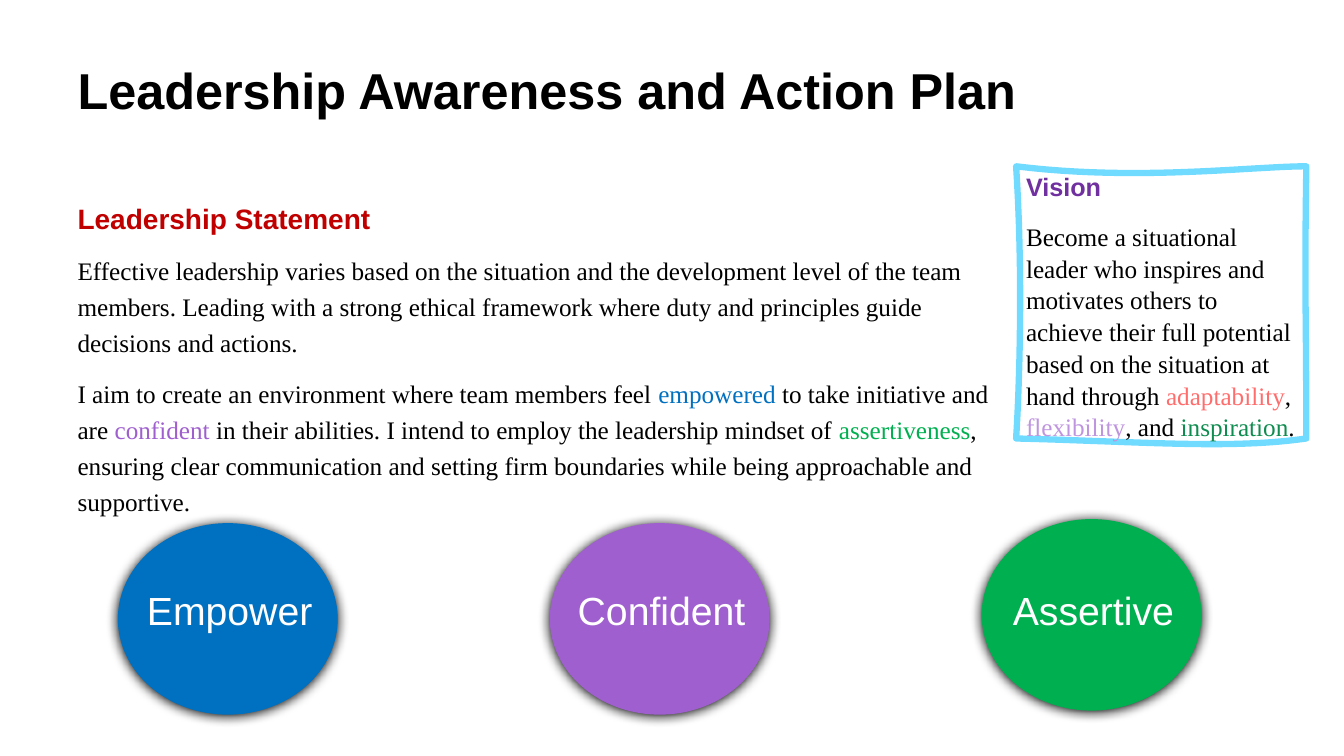
from lxml import etree
from pptx import Presentation
from pptx import util as u
from pptx.dml.color import RGBColor
from pptx.enum import shapes, text
from pptx.oxml.ns import qn

# Content: a paragraph is a list of (words, colour) runs
TITLE = [[("Leadership Awareness and Action Plan", "000000")]]
STATEMENT_HEAD = [[("Leadership Statement", "C00000")]]
STATEMENT = [
    [("Effective leadership varies based on the situation and the development "
      "level of the team members. Leading with a strong ethical framework where "
      "duty and principles guide decisions and actions.", "000000")],
    [("I aim to create an environment where team members feel ", "000000"),
     ("empowered", "0070C0"),
     (" to take initiative and are ", "000000"),
     ("confident", "9F5FCF"),
     (" in their abilities. I intend to employ the leadership mindset of ", "000000"),
     ("assertiveness", "00B050"),
     (", ensuring clear communication and setting firm boundaries while being "
      "approachable and supportive.", "000000")],
]
VISION_HEAD = [[("Vision", "7030A0")]]
VISION = [
    [("Become a situational leader who inspires and motivates others to achieve "
      "their full potential based on the situation at hand through ", "000000"),
     ("adaptability", "FF6D6D"),
     (", ", "000000"),
     ("flexibility", "BF95DF"),
     (", and ", "000000"),
     ("inspiration", "0F8C4F"),
     (".", "000000")],
]
# Label, colour, top of circle, width of label
VALUES = [
    ("Empower", "0070C0", 373.7, 157),
    ("Confident", "9F5FCF", 373.7, 157),
    ("Assertive", "00B050", 370.8, 142),
]

# Layout, in points
TITLE_BOX = (48.2, 43.2, 838.8, 89.3)
STATEMENT_BOX = (48.2, 135.4, 686.2, 238.3)
CIRCLE_WIDTH, CIRCLE_HEIGHT = 157, 136.8
FIRST_CENTRE, CENTRE_STEP = 162.7, 308.5
LABEL_TOP, LABEL_HEIGHT, LABEL_SHIFT = 415.4, 41, 1.3
FRAME_START = (725.8, 118.8)
FRAME_CURVES = [  # two control points and an end point per side
    ((812.9, 129.6), (894.2, 118.8), (933.1, 118.8)),
    ((931.7, 214.6), (933.1, 223.9), (933.1, 313.2)),
    ((878.4, 321.1), (815, 315.4), (725.8, 313.2)),
    ((727.2, 291.6), (731.5, 206.6), FRAME_START),
]
CURVE_STEPS = 24

# Text formats
TITLE_FONT = {"name": "Arial", "size": u.Pt(36), "bold": True}
HEAD_FONT = {"name": "Arial", "size": u.Pt(20), "bold": True}
VISION_FONT = {"name": "Arial", "size": u.Pt(18), "bold": True}
BODY_FONT = {"name": "Times New Roman", "size": u.Pt(18), "bold": False}
LABEL_FONT = {"name": "Arial", "size": u.Pt(28), "bold": False}
LEFT = text.PP_ALIGN.LEFT
TITLE_PARA = {"alignment": LEFT, "line_spacing": 0.9}
STATEMENT_PARA = {"alignment": LEFT, "line_spacing": 1.2, "space_before": u.Pt(10)}
VISION_HEAD_PARA = {"alignment": LEFT}
VISION_PARA = {"alignment": LEFT, "line_spacing": 1.05, "space_before": u.Pt(13)}
LABEL_PARA = {"alignment": text.PP_ALIGN.CENTER}
FRAME_FORMAT = {"word_wrap": True, "auto_size": text.MSO_AUTO_SIZE.NONE,
                "vertical_anchor": text.MSO_ANCHOR.TOP}


def colour(hex_code):
    return RGBColor.from_string(hex_code)


def apply(target, values):
    for name, value in values.items():
        setattr(target, name, value)


def place(shape, box):
    for name, value in zip(("left", "top", "width", "height"), box):
        setattr(shape, name, u.Pt(value))


def write(shape, *blocks):
    """Fill a shape with blocks of (paragraphs, font, paragraph format)."""
    frame = shape.text_frame
    apply(frame, FRAME_FORMAT)
    first = True
    for paragraphs, font, para_format in blocks:
        for runs in paragraphs:
            para = frame.paragraphs[0] if first else frame.add_paragraph()
            first = False
            apply(para, para_format)
            for words, hex_code in runs:
                span = para.add_run()
                span.text = words
                apply(span.font, font)
                span.font.color.rgb = colour(hex_code)


def remove_bullets(shape):
    for para in shape.text_frame.paragraphs:
        properties = para._p.get_or_add_pPr()
        properties.set("marL", "0")
        properties.set("indent", "0")
        etree.SubElement(properties, qn("a:buNone"))


def add_glow_shadow(shape):
    effects = etree.SubElement(shape._element.spPr, qn("a:effectLst"))
    shadow = etree.SubElement(effects, qn("a:outerShdw"), blurRad=str(u.Pt(8.5)),
                              dist=str(u.Pt(1)), dir="5400000", algn="ctr",
                              rotWithShape="0")
    etree.SubElement(shadow, qn("a:srgbClr"), val="000000")


def curve_points(start, curves):
    """Sample a chain of cubic curves as points."""
    points = []
    for first, second, end in curves:
        for step in range(1, CURVE_STEPS + 1):
            t = step / CURVE_STEPS
            s = 1 - t
            points.append(tuple(
                u.Pt(s**3 * a + 3 * s * s * t * b + 3 * s * t * t * c + t**3 * d)
                for a, b, c, d in zip(start, first, second, end)))
        start = end
    return points


deck = Presentation()
deck.slide_width, deck.slide_height = u.Pt(960), u.Pt(540)
page = deck.slides.add_slide(deck.slide_layouts[1])

# Title and statement
title, statement = page.placeholders
place(title, TITLE_BOX)
write(title, (TITLE, TITLE_FONT, TITLE_PARA))
place(statement, STATEMENT_BOX)
write(statement, (STATEMENT_HEAD, HEAD_FONT, STATEMENT_PARA),
      (STATEMENT, BODY_FONT, STATEMENT_PARA))
remove_bullets(statement)

# Value circles with their labels
for index, (label, fill, top, label_width) in enumerate(VALUES):
    centre = FIRST_CENTRE + index * CENTRE_STEP
    circle = page.shapes.add_shape(shapes.MSO_SHAPE.FLOWCHART_CONNECTOR, 0, 0, 0, 0)
    place(circle, (centre - CIRCLE_WIDTH / 2, top, CIRCLE_WIDTH, CIRCLE_HEIGHT))
    circle.fill.solid()
    circle.fill.fore_color.rgb = colour(fill)
    circle.line.fill.background()
    add_glow_shadow(circle)

    box = page.shapes.add_textbox(0, 0, 0, 0)
    place(box, (centre + LABEL_SHIFT - label_width / 2, LABEL_TOP,
                label_width, LABEL_HEIGHT))
    write(box, ([[(label, "FFFFFF")]], LABEL_FONT, LABEL_PARA))

# Vision in a hand-drawn frame
builder = page.shapes.build_freeform(*map(u.Pt, FRAME_START))
builder.add_line_segments(curve_points(FRAME_START, FRAME_CURVES), close=True)
vision = builder.convert_to_shape()
vision.shadow.inherit = False
vision.fill.background()
vision.line.color.rgb = colour("71DAFF")
vision.line.width = u.Pt(4.5)
write(vision, (VISION_HEAD, VISION_FONT, VISION_HEAD_PARA),
      (VISION, BODY_FONT, VISION_PARA))

deck.save("out.pptx")
